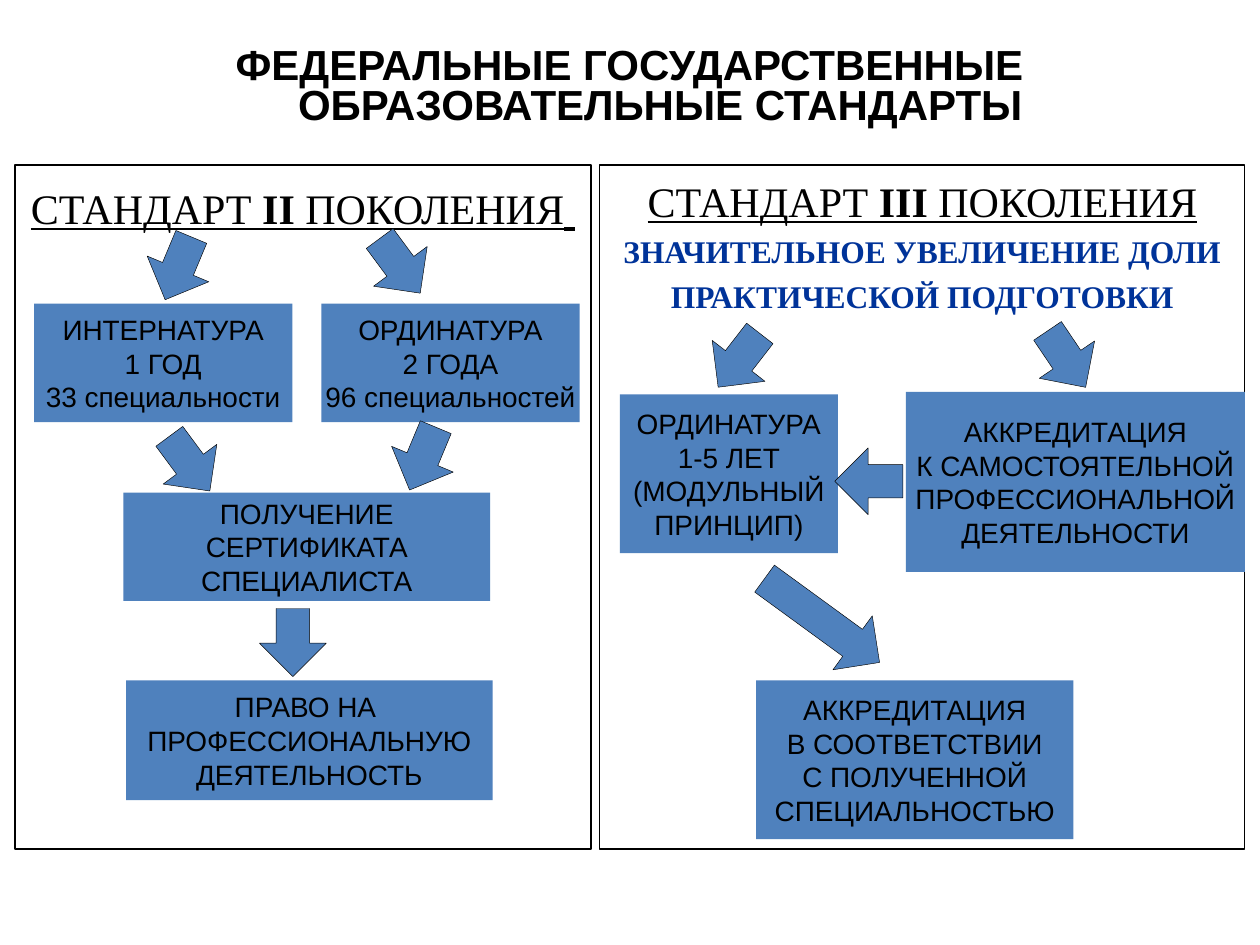
from pptx import Presentation
from pptx.dml.color import RGBColor
from pptx.enum.shapes import MSO_SHAPE as Shape
from pptx.enum.text import MSO_ANCHOR as Anchor, MSO_AUTO_SIZE as Fit, PP_ALIGN as Align
from pptx.util import Inches, Pt

BLACK = RGBColor(0, 0, 0)
BLUE = RGBColor(0x4F, 0x81, 0xBD)
NAVY = RGBColor(0x00, 0x33, 0x99)
SERIF = "Times New Roman"

# The slide is a grid of 100 columns by 75 rows of square cells.
COLS, ROWS = 100, 75
CELL = Inches(0.1)

TITLE = "ФЕДЕРАЛЬНЫЕ ГОСУДАРСТВЕННЫЕ ОБРАЗОВАТЕЛЬНЫЕ СТАНДАРТЫ"
TITLE_AREA = (2.7, 2.1, 94.5, 9.8)

# Run: text, size, font, colour, bold, underline


def head(text, bold=False):
    return (text, 24, SERIF, BLACK, bold, True)


def note(text):
    return [(text, 18, SERIF, NAVY, True, False)]


PANEL_TOP, PANEL_ROWS = 13.1, 54.3
PANELS = [  # left, width, paragraphs of runs
    (1.2, 45.7, [[head("СТАНДАРТ "), head("II", True), head(" ПОКОЛЕНИЯ"),
                  (" ", 28, "Calibri", BLACK, True, True)]]),
    (47.6, 51.2, [[head("СТАНДАРТ "), head("III", True), head(" ПОКОЛЕНИЯ")],
                  note("ЗНАЧИТЕЛЬНОЕ УВЕЛИЧЕНИЕ ДОЛИ"),
                  note("ПРАКТИЧЕСКОЙ ПОДГОТОВКИ")]),
]

STEPS = [  # left, top, width, height, lines
    (2.7, 24.1, 20.5, 9.4, ["ИНТЕРНАТУРА", "1 ГОД", "33 специальности"]),
    (25.5, 24.1, 20.5, 9.4, ["ОРДИНАТУРА", "2 ГОДА", "96 специальностей"]),
    (9.8, 39.1, 29.1, 8.6, ["ПОЛУЧЕНИЕ", "СЕРТИФИКАТА", "СПЕЦИАЛИСТА"]),
    (10, 54, 29.1, 9.5, ["ПРАВО НА ", "ПРОФЕССИОНАЛЬНУЮ", "ДЕЯТЕЛЬНОСТЬ"]),
    (49.2, 31.3, 17.3, 12.6, ["ОРДИНАТУРА", "1-5 ЛЕТ", "(МОДУЛЬНЫЙ", "ПРИНЦИП)"]),
    (71.9, 31.1, 26.9, 14.3, ["АККРЕДИТАЦИЯ", "К САМОСТОЯТЕЛЬНОЙ",
                              "ПРОФЕССИОНАЛЬНОЙ", "ДЕЯТЕЛЬНОСТИ"]),
    (60, 54, 25.2, 12.6, ["АККРЕДИТАЦИЯ", "В СООТВЕТСТВИИ",
                          "С ПОЛУЧЕННОЙ", "СПЕЦИАЛЬНОСТЬЮ"]),
]

WIDE, SHORT, LONG = 5.3, 5.4, 11.3
ARROWS = [  # left, top, length, clockwise turn from pointing down
    (11.5, 18.6, SHORT, 22.6),
    (29.1, 18.4, SHORT, -36.5),
    (30.9, 33.7, SHORT, 22.6),
    (12.4, 34.1, SHORT, -36.5),
    (20.6, 48.3, SHORT, 0),
    (82, 25.8, SHORT, -34),
    (56, 25.9, SHORT, 37.8),
    (62.6, 43.6, LONG, -53.9),
    (66.3, 35.5, SHORT, 90),
]


def cells(*area):
    return [round(n * CELL) for n in area]


def style(font, size, name, color, bold=False, under=False):
    font.size, font.name = Pt(size), name
    font.color.rgb = color
    font.bold, font.underline = bold, under


def hang(para, depth):
    """Centre a paragraph with a hanging indent of depth inches."""
    para.alignment = Align.CENTER
    props = para._p.get_or_add_pPr()
    props.set("marL", str(Inches(depth)))
    props.set("indent", str(-Inches(depth)))


def draw(slide, kind, area, fill=None, line=None):
    shape = slide.shapes.add_shape(kind, *cells(*area))
    shape.shadow.inherit = False
    if fill is None:
        shape.fill.background()
    else:
        shape.fill.solid()
        shape.fill.fore_color.rgb = fill
    if line is None:
        shape.line.fill.background()
    else:
        shape.line.color.rgb = BLACK
        shape.line.width = Pt(line)
    return shape


def add_title(slide):
    title = slide.shapes.title
    title.left, title.top, title.width, title.height = cells(*TITLE_AREA)
    frame = title.text_frame
    frame.text = TITLE
    frame.word_wrap, frame.auto_size = True, Fit.NONE
    frame.vertical_anchor = Anchor.MIDDLE
    para = frame.paragraphs[0]
    hang(para, 0.49)
    para.line_spacing = 0.8
    style(para.runs[0].font, 24, "Arial", BLACK, bold=True)


def add_panel(slide, left, width, paras):
    area = (left, PANEL_TOP, width, PANEL_ROWS)
    frame = draw(slide, Shape.RECTANGLE, area, line=0.75).text_frame
    frame.vertical_anchor = Anchor.TOP
    frame.margin_top = Inches(0.08)
    frame.word_wrap = True
    for i, runs in enumerate(paras):
        para = frame.add_paragraph() if i else frame.paragraphs[0]
        hang(para, 0.38)
        if i:
            para.space_before = Pt(4)
        for text, *look in runs:
            run = para.add_run()
            run.text = text
            style(run.font, *look)


def add_step(slide, *area, lines):
    frame = draw(slide, Shape.RECTANGLE, area, fill=BLUE).text_frame
    frame.text = "\n".join(lines)
    frame.word_wrap = False
    frame.vertical_anchor = Anchor.MIDDLE
    for para in frame.paragraphs:
        para.alignment = Align.CENTER
        style(para.runs[0].font, 16, "Arial", BLACK)


def main():
    deck = Presentation()
    deck.slide_width, deck.slide_height = COLS * CELL, ROWS * CELL
    slide = deck.slides.add_slide(deck.slide_layouts[5])
    add_title(slide)
    for panel in PANELS:
        add_panel(slide, *panel)
    for *area, lines in STEPS:
        add_step(slide, *area, lines=lines)
    for left, top, size, turn in ARROWS:
        arrow = draw(slide, Shape.DOWN_ARROW, (left, top, WIDE, size), BLUE, 0.25)
        arrow.rotation = turn
    deck.save("out.pptx")


if __name__ == "__main__":
    main()
